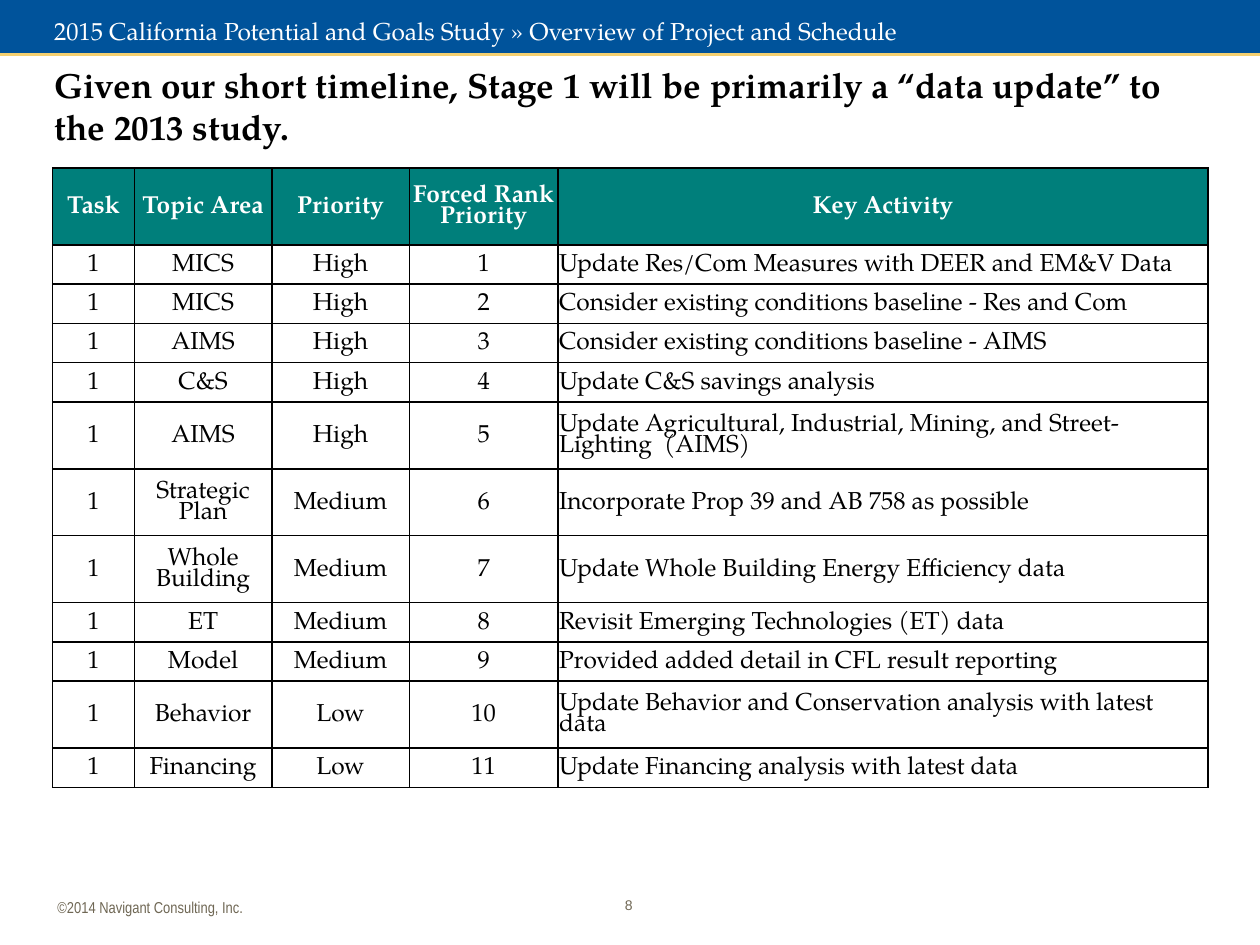
from lxml.etree import SubElement
from pptx import Presentation
from pptx.dml.color import RGBColor
from pptx.enum.shapes import MSO_CONNECTOR as Connector, MSO_SHAPE as Shape
from pptx.enum.text import MSO_ANCHOR as Anchor, PP_ALIGN as Align
from pptx.oxml.ns import qn
from pptx.util import Cm, Pt

WHITE = RGBColor(0xFF, 0xFF, 0xFF)
BLACK = RGBColor(0, 0, 0)
BLUE = RGBColor(0x00, 0x53, 0x9B)
GOLD = RGBColor(0xF5, 0xD0, 0x70)
TEAL = RGBColor(0x00, 0x7F, 0x7B)
TAUPE = RGBColor(0x6F, 0x67, 0x54)
SERIF = "TeX Gyre Pagella"

PAGE_WIDTH, PAGE_HEIGHT = Cm(25.4), Cm(19.05)
BANNER_HEIGHT = Cm(1.07)

HEADINGS = ["Task", "Topic Area", "Priority", "Forced Rank Priority", "Key Activity"]
COLUMN_WIDTHS = [1.65, 2.77, 2.77, 3, 13.1]
HEADER_HEIGHT, SINGLE_LINE, DOUBLE_LINE = 1.55, 0.79, 1.35
# Topic area, priority, key activity, row height; listed in rank order
ACTIVITIES = [
    ("MICS", "High", "Update Res/Com Measures with DEER and EM&V Data", SINGLE_LINE),
    ("MICS", "High", "Consider existing conditions baseline - Res and Com", SINGLE_LINE),
    ("AIMS", "High", "Consider existing conditions baseline - AIMS", SINGLE_LINE),
    ("C&S", "High", "Update C&S savings analysis", SINGLE_LINE),
    ("AIMS", "High", "Update Agricultural, Industrial, Mining, and Street-Lighting  (AIMS)",
     DOUBLE_LINE),
    ("Strategic Plan", "Medium", "Incorporate Prop 39 and AB 758 as possible", DOUBLE_LINE),
    ("Whole Building", "Medium", "Update Whole Building Energy Efficiency data", DOUBLE_LINE),
    ("ET", "Medium", "Revisit Emerging Technologies (ET) data", SINGLE_LINE),
    ("Model", "Medium", "Provided added detail in CFL result reporting", SINGLE_LINE),
    ("Behavior", "Low", "Update Behavior and Conservation analysis with latest data",
     DOUBLE_LINE),
    ("Financing", "Low", "Update Financing analysis with latest data", SINGLE_LINE),
]


def style_font(para, name, size, color, bold=False):
    for span in para.runs:
        span.font.name = name
        span.font.size = Pt(size)
        span.font.bold = bold
        span.font.color.rgb = color


def add_text(page, text, left, top, width, height, size, color,
             name=SERIF, bold=False, align=Align.LEFT, anchor=Anchor.TOP):
    box = page.shapes.add_textbox(Cm(left), Cm(top), Cm(width), Cm(height))
    frame = box.text_frame
    frame.word_wrap = True
    frame.vertical_anchor = anchor
    frame.text = text
    para = frame.paragraphs[0]
    para.alignment = align
    style_font(para, name, size, color, bold)
    return frame


def add_banner(page):
    """Blue band whose lower edge covers half of a gold rule."""
    rule = page.shapes.add_connector(
        Connector.STRAIGHT, PAGE_WIDTH, BANNER_HEIGHT, 0, BANNER_HEIGHT)
    rule.line.color.rgb = GOLD
    rule.line.width = Pt(3)
    SubElement(rule._element.spPr, qn("a:effectLst"))
    band = page.shapes.add_shape(Shape.RECTANGLE, 0, 0, PAGE_WIDTH, BANNER_HEIGHT)
    band.shadow.inherit = False
    band.fill.solid()
    band.fill.fore_color.rgb = BLUE
    band.line.fill.background()


def add_borders(cell):
    properties = cell._tc.get_or_add_tcPr()
    for side in ("lnL", "lnR", "lnT", "lnB"):
        line = SubElement(properties, qn(f"a:{side}"), w=str(Pt(1)))
        fill = SubElement(line, qn("a:solidFill"))
        SubElement(fill, qn("a:srgbClr"), val=str(BLACK))


def fill_cell(cell, text, is_header, align):
    add_borders(cell)
    if is_header:
        cell.fill.solid()
        cell.fill.fore_color.rgb = TEAL
    else:
        cell.fill.background()
    cell.margin_left = cell.margin_right = cell.margin_top = Cm(0.02)
    cell.margin_bottom = 0
    cell.vertical_anchor = Anchor.MIDDLE
    cell.text_frame.text = text
    para = cell.text_frame.paragraphs[0]
    para.alignment = align
    para.line_spacing = 0.85
    style_font(para, SERIF, 14, WHITE if is_header else BLACK, is_header)


def add_activity_table(page):
    rows = [HEADINGS]
    heights = [HEADER_HEIGHT]
    for rank, (topic, priority, activity, height) in enumerate(ACTIVITIES, 1):
        rows.append(["1", topic, priority, str(rank), activity])
        heights.append(height)
    table = page.shapes.add_table(
        len(rows), len(HEADINGS), Cm(1.06), Cm(3.39),
        Cm(sum(COLUMN_WIDTHS)), Cm(sum(heights))).table
    table.first_row = table.horz_banding = False
    for column, width in zip(table.columns, COLUMN_WIDTHS):
        column.width = Cm(width)
    for r, (values, height) in enumerate(zip(rows, heights)):
        table.rows[r].height = Cm(height)
        for c, value in enumerate(values):
            is_activity = r > 0 and c == len(HEADINGS) - 1
            fill_cell(table.cell(r, c), value, r == 0,
                      Align.LEFT if is_activity else Align.CENTER)


def add_footer(page):
    number = add_text(page, "8", 12.04, 17.91, 1.27, 0.84, 8, TAUPE,
                      name="Arial", align=Align.CENTER)
    number.margin_top = number.margin_bottom = Cm(0.25)
    add_text(page, "©2014 Navigant Consulting, Inc.", 0.91, 17.98, 9.68, 0.64, 9, TAUPE,
             name="Arial Narrow")


def main():
    deck = Presentation()
    deck.slide_width, deck.slide_height = PAGE_WIDTH, PAGE_HEIGHT
    page = deck.slides.add_slide(deck.slide_layouts[6])
    add_banner(page)
    add_footer(page)
    add_text(page, "2015 California Potential and Goals Study » Overview of Project and Schedule",
             0.84, 0.2, 23.62, 0.64, 14, WHITE)
    add_text(page, "Given our short timeline, Stage 1 will be primarily a “data update” to "
             "the 2013 study.", 0.84, 1.27, 23.62, 1.7, 20, BLACK,
             bold=True, anchor=Anchor.MIDDLE)
    add_activity_table(page)
    deck.save("out.pptx")


if __name__ == "__main__":
    main()
